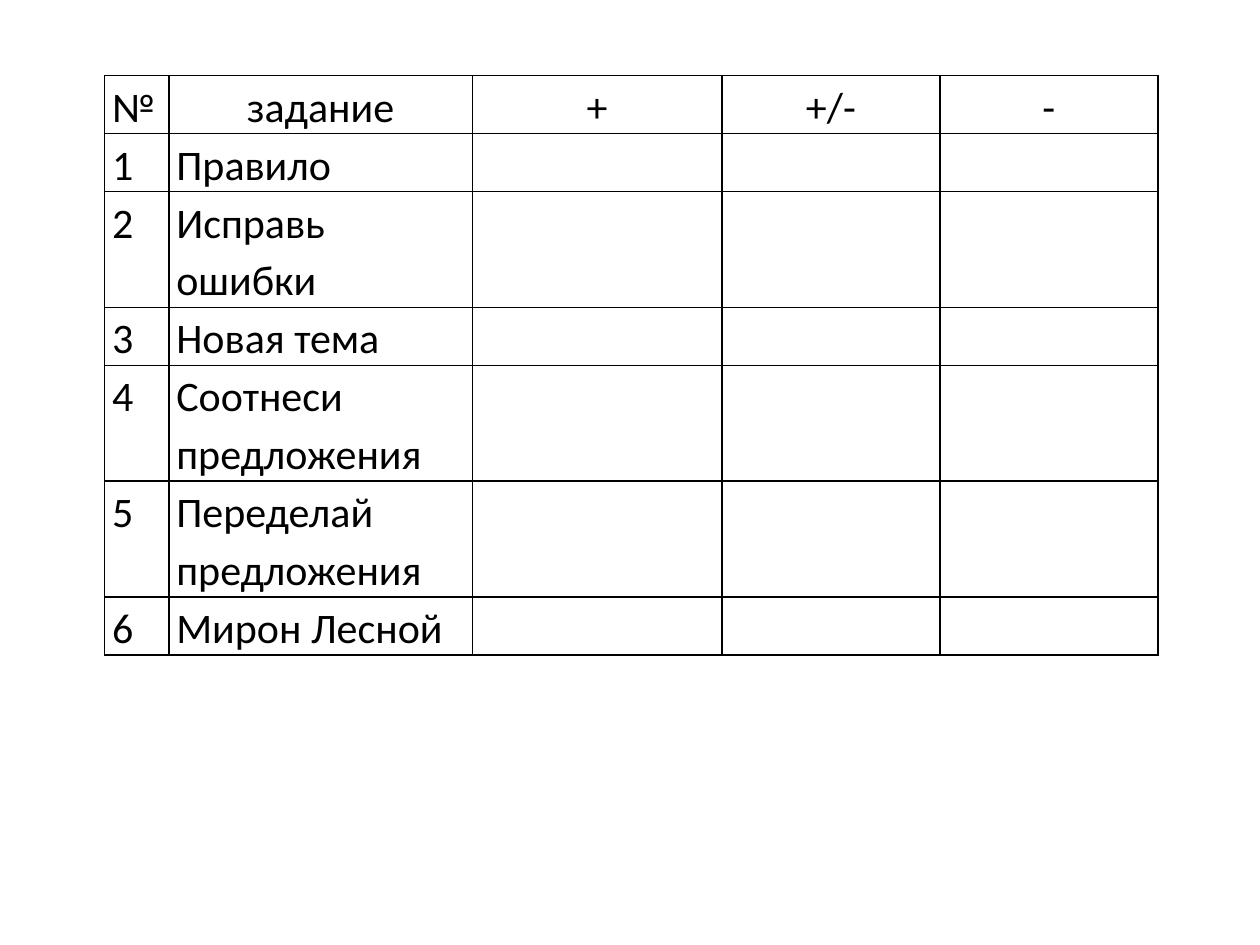
from dataclasses import dataclass

from lxml import etree
from pptx import Presentation
from pptx import util as u
from pptx.dml.color import RGBColor
from pptx.enum import text
from pptx.oxml.ns import qn


@dataclass(frozen=True)
class Theme:
    font: str = "Calibri"
    size: int = 24
    ink: str = "000000"
    paper: str = "FFFFFF"
    border: float = 1
    line_spacing: float = 1.13


class SlideBuilder:
    def __init__(self, presentation, theme):
        self.theme = theme
        self.slide = presentation.slides.add_slide(presentation.slide_layouts[6])
        background = self.slide.background.fill
        background.solid()
        background.fore_color.rgb = RGBColor.from_string(theme.paper)

    def table(self, left, top, widths, heights, rows):
        frame = self.slide.shapes.add_table(
            len(rows), len(widths), u.Inches(left), u.Inches(top),
            u.Inches(sum(widths)), u.Inches(sum(heights)))
        table = frame.table
        table.first_row = table.horz_banding = False
        for column, width in zip(table.columns, widths):
            column.width = u.Inches(width)
        for row, height in zip(table.rows, heights):
            row.height = u.Inches(height)
        for row_index, row in enumerate(rows):
            for column_index, content in enumerate(row):
                centred = row_index == 0 and column_index > 0
                self.cell(table.cell(row_index, column_index), content, centred)

    def cell(self, cell, content, centred):
        self.borders(cell)
        cell.fill.background()
        if not content:
            return
        cell.margin_left = cell.margin_right = u.Inches(0.06)
        cell.margin_top = cell.margin_bottom = 0
        paragraph = cell.text_frame.paragraphs[0]
        paragraph.line_spacing = self.theme.line_spacing
        paragraph.alignment = text.PP_ALIGN.CENTER if centred else text.PP_ALIGN.LEFT
        run = paragraph.add_run()
        run.text = content
        run.font.name = self.theme.font
        run.font.size = u.Pt(self.theme.size)
        run.font.color.rgb = RGBColor.from_string(self.theme.ink)

    def borders(self, cell):
        properties = cell._tc.get_or_add_tcPr()
        for side in ("lnL", "lnR", "lnT", "lnB"):
            line = etree.SubElement(properties, qn(f"a:{side}"),
                                    w=str(u.Pt(self.theme.border)))
            fill = etree.SubElement(line, qn("a:solidFill"))
            etree.SubElement(fill, qn("a:srgbClr"), val=self.theme.ink)


def main():
    presentation = Presentation()
    presentation.slide_width = u.Inches(10)
    presentation.slide_height = u.Inches(7.5)
    builder = SlideBuilder(presentation, Theme())

    # Self-assessment table: numbered tasks with empty columns for marks
    header = ["№", "задание", "+", "+/-", "-"]
    tasks = ["Правило", "Исправь ошибки", "Новая тема", "Соотнеси предложения",
             "Переделай предложения", "Мирон Лесной"]
    rows = [header] + [[str(number), task, "", "", ""]
                       for number, task in enumerate(tasks, 1)]

    # Row height follows the number of text lines
    line_height = 0.46
    line_counts = [1, 1, 2, 1, 2, 2, 1]
    heights = [line_height * count for count in line_counts]
    builder.table(0.83, 0.6, [0.51, 2.41, 1.98, 1.73, 1.73], heights, rows)

    presentation.save("out.pptx")


if __name__ == "__main__":
    main()
